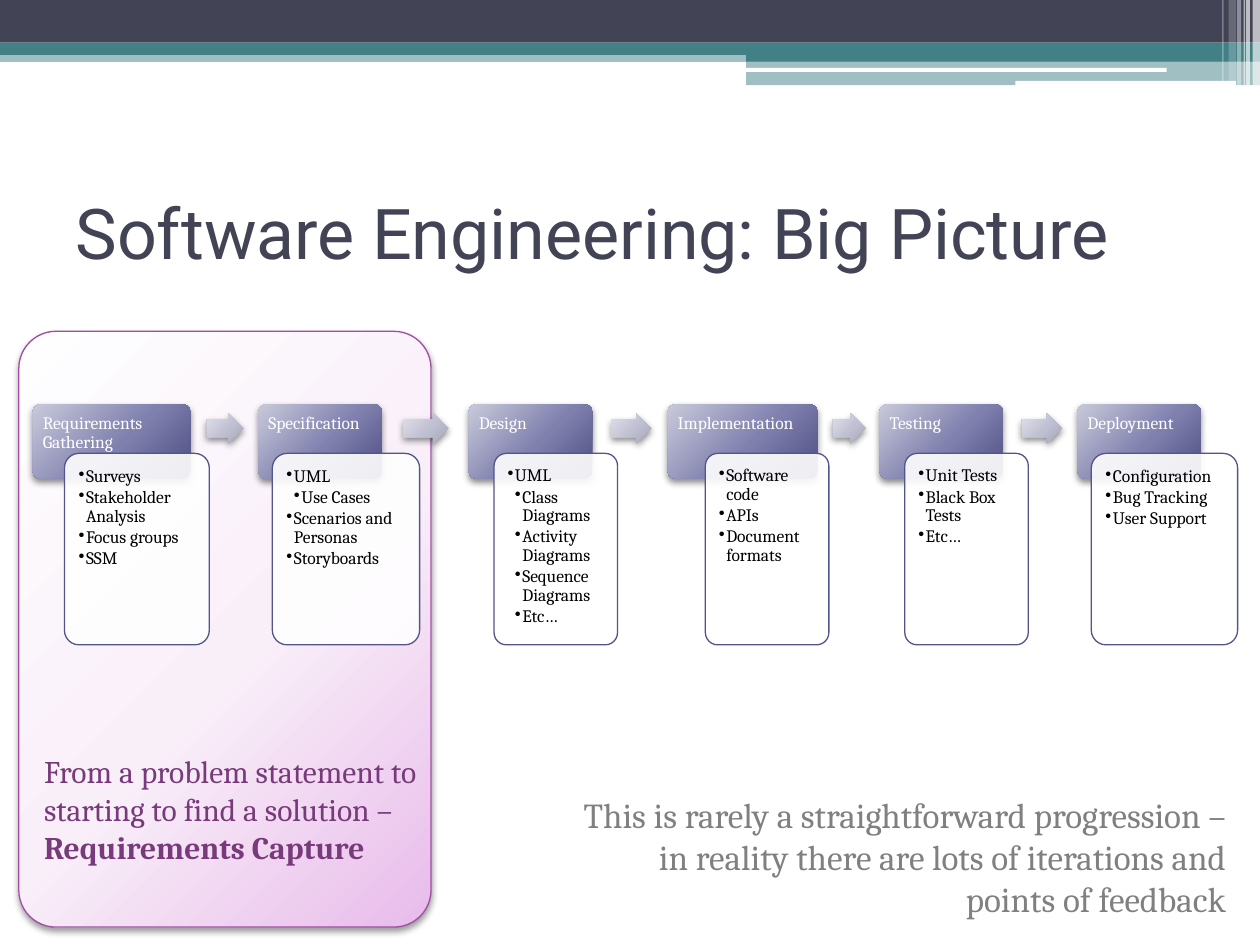
from dataclasses import dataclass
from typing import Optional

from pptx import Presentation, oxml
from pptx import util as u
from pptx.dml.color import RGBColor
from pptx.enum import shapes, text
from pptx.oxml import ns

RECT = shapes.MSO_SHAPE.RECTANGLE
ROUND = shapes.MSO_SHAPE.ROUNDED_RECTANGLE
ARROW = shapes.MSO_SHAPE.RIGHT_ARROW
SERIF = "Cambria"
NAVY, TEAL, WHITE, INDIGO = "424456", "438086", "FFFFFF", "53548A"
HEADER_SHADES = ("C9C9DA", "7F80AE", "4D4E81")
ARROW_SHADES = ("E1E1EA", "C0C0D3", "A7A7B7")
CAPTURE_SHADES = ("FEFEFF", "F9EFF9", "E8BBEA")


@dataclass
class Box:
    left: float
    top: float
    width: float
    height: float

    def lengths(self) -> list:
        return [u.Cm(v) for v in (self.left, self.top, self.width, self.height)]


@dataclass
class Band:
    box: Box
    color: str
    opacity: int = 100
    preset: int = RECT


@dataclass
class Bullet:
    wording: str
    level: int = 1


@dataclass
class Span:
    left: float
    width: float


@dataclass
class Stage:
    label: str
    header: Span
    card: Span
    bullets: list
    arrow: Optional[Span] = None


@dataclass
class Caption:
    box: Box
    runs: list
    size: int
    color: str
    align: int


def rgb(color: str) -> RGBColor:
    return RGBColor.from_string(color)


def add_preset(slide, preset, box: Box, adjustments=()):
    shape = slide.shapes.add_shape(preset, *box.lengths())
    for index, value in enumerate(adjustments):
        shape.adjustments[index] = value
    shape.shadow.inherit = False
    shape.line.fill.background()
    return shape


def fill_solid(shape, color: str, opacity: int = 100) -> None:
    shape.fill.solid()
    shape.fill.fore_color.rgb = rgb(color)
    if opacity < 100:
        solid = shape._element.spPr.find(ns.qn("a:solidFill"))
        solid[0].append(oxml.parse_xml(
            f'<a:alpha {ns.nsdecls("a")} val="{opacity * 1000}"/>'))


def fill_radial(shape, shades: tuple) -> None:
    stops = "".join(
        f'<a:gs pos="{position * 1000}"><a:srgbClr val="{shade}"/></a:gs>'
        for position, shade in zip((0, 55, 100), shades))
    shape.fill.gradient()
    properties = shape._element.spPr
    properties.replace(properties.find(ns.qn("a:gradFill")), oxml.parse_xml(
        f'<a:gradFill {ns.nsdecls("a")} rotWithShape="1"><a:gsLst>{stops}</a:gsLst>'
        '<a:path path="circle"><a:fillToRect l="-40000" t="-90000" '
        'r="140000" b="190000"/></a:path></a:gradFill>'))


def drop_shadow(shape, opacity: int = 45) -> None:
    effects = shape._element.spPr.find(ns.qn("a:effectLst"))
    effects.append(oxml.parse_xml(
        f'<a:outerShdw {ns.nsdecls("a")} blurRad="{u.Pt(4)}" dist="{u.Pt(2)}" '
        'dir="5400000" algn="ctr" rotWithShape="0"><a:srgbClr val="000000">'
        f'<a:alpha val="{opacity * 1000}"/></a:srgbClr></a:outerShdw>'))


def outline(shape, color: str) -> None:
    shape.line.color.rgb = rgb(color)
    shape.line.width = u.Pt(0.75)


def add_run(paragraph, wording: str, size: int, color: str,
            face: str = SERIF, bold: bool = False) -> None:
    run = paragraph.add_run()
    run.text = wording
    run.font.size = u.Pt(size)
    run.font.name = face
    run.font.bold = bold
    run.font.color.rgb = rgb(color)


def prepare_frame(shape, inset: float):
    frame = shape.text_frame
    frame.word_wrap = True
    frame.vertical_anchor = text.MSO_ANCHOR.TOP
    frame.margin_left = frame.margin_right = u.Cm(inset)
    frame.margin_top = frame.margin_bottom = u.Cm(inset)
    return frame


def add_bullets(frame, bullets: list) -> None:
    for index, bullet in enumerate(bullets):
        paragraph = frame.add_paragraph() if index else frame.paragraphs[0]
        paragraph.alignment = text.PP_ALIGN.LEFT
        paragraph.level = bullet.level
        paragraph.line_spacing = 0.9
        paragraph.space_after = u.Pt(1.2)
        properties = paragraph._p.get_or_add_pPr()
        properties.set("marL", str(u.Cm(0.15 * bullet.level)))
        properties.set("indent", str(u.Cm(-0.15)))
        properties.append(oxml.parse_xml(f'<a:buChar {ns.nsdecls("a")} char="•"/>'))
        add_run(paragraph, bullet.wording, 10, "000000")


def draw_stage(slide, stage: Stage) -> None:
    header = add_preset(slide, ROUND, Box(stage.header.left, 8.15, stage.header.width, 1.5), [0.1])
    fill_radial(header, HEADER_SHADES)
    drop_shadow(header)
    label = prepare_frame(header, 0.16).paragraphs[0]
    label.alignment = text.PP_ALIGN.LEFT
    label.line_spacing = 0.9
    add_run(label, stage.label, 10, WHITE)

    card = add_preset(slide, ROUND, Box(stage.card.left, 9.14, stage.card.width, 3.86), [0.1])
    fill_solid(card, WHITE, 90)
    outline(card, INDIGO)
    add_bullets(prepare_frame(card, 0.2), stage.bullets)

    if stage.arrow:
        arrow = add_preset(slide, ARROW, Box(stage.arrow.left, 8.33, stage.arrow.width, 0.61), [0.6, 0.5])
        fill_radial(arrow, ARROW_SHADES)
        drop_shadow(arrow)


def draw_caption(slide, caption: Caption) -> None:
    frame = slide.shapes.add_textbox(*caption.box.lengths()).text_frame
    frame.word_wrap = True
    paragraph = frame.paragraphs[0]
    paragraph.alignment = caption.align
    for wording, bold in caption.runs:
        add_run(paragraph, wording, caption.size, caption.color, bold=bold)


BANDS = [
    Band(Box(0, 1.02, 25.4, 0.23), TEAL, 50),
    Band(Box(0, 0, 25.4, 0.86), NAVY),
    Band(Box(0, 0.86, 25.4, 0.25), TEAL),
    Band(Box(15.04, 0.99, 10.36, 0.25), TEAL),
    Band(Box(15.04, 1.22, 10.36, 0.5), TEAL, 50),
    Band(Box(15.01, 1.37, 8.51, 0.08), WHITE, preset=ROUND),
    Band(Box(20.47, 1.63, 4.45, 0.1), WHITE, preset=ROUND),
] + [Band(Box(left, 0, width, height), WHITE, opacity) for left, width, height, opacity in (
    (25.25, 0.15, 1.73, 65), (25.12, 0.08, 1.73, 65), (25.07, 0.03, 1.73, 60),
    (24.94, 0.08, 1.73, 40), (24.77, 0.15, 1.63, 20), (24.64, 0.03, 1.63, 30))]

STAGES = [
    Stage("Requirements Gathering", Span(0.66, 3.18), Span(1.3, 2.92),
          [Bullet("Surveys"), Bullet("Stakeholder Analysis"), Bullet("Focus groups"),
           Bullet("SSM")], Span(4.17, 0.74)),
    Stage("Specification", Span(5.21, 2.49), Span(5.49, 2.97),
          [Bullet("UML"), Bullet("Use Cases", 2), Bullet("Scenarios and Personas"),
           Bullet("Storyboards")], Span(8.13, 0.91)),
    Stage("Design", Span(9.45, 2.49), Span(9.96, 2.49),
          [Bullet("UML"), Bullet("Class Diagrams", 2), Bullet("Activity Diagrams", 2),
           Bullet("Sequence Diagrams", 2), Bullet("Etc…", 2)], Span(12.32, 0.81)),
    Stage("Implementation", Span(13.46, 3.02), Span(14.22, 2.49),
          [Bullet("Software code"), Bullet("APIs"), Bullet("Document formats")], Span(16.79, 0.66)),
    Stage("Testing", Span(17.73, 2.49), Span(18.24, 2.49),
          [Bullet("Unit Tests"), Bullet("Black Box Tests"), Bullet("Etc…")], Span(20.6, 0.81)),
    Stage("Deployment", Span(21.72, 2.49), Span(22, 2.95),
          [Bullet("Configuration"), Bullet("Bug Tracking"), Bullet("User Support")]),
]

CAPTIONS = [
    Caption(Box(11.43, 15.88, 13.54, 2.82),
            [("This is rarely a straightforward progression – in reality there are "
              "lots of iterations and points of feedback", False)],
            20, "808080", text.PP_ALIGN.RIGHT),
    Caption(Box(0.64, 15.04, 8.05, 3.33),
            [("From a problem statement to starting to find a solution – ", False),
             ("Requirements Capture", True)], 18, "783A7A", text.PP_ALIGN.LEFT),
]


def main() -> None:
    deck = Presentation()
    deck.slide_width, deck.slide_height = u.Cm(25.4), u.Cm(19.05)
    slide = deck.slides.add_slide(deck.slide_layouts[5])
    for band in BANDS:
        fill_solid(add_preset(slide, band.preset, band.box), band.color, band.opacity)

    capture = add_preset(slide, ROUND, Box(0.38, 6.68, 8.31, 12.01), [0.09])
    fill_radial(capture, CAPTURE_SHADES)
    outline(capture, "A04DA3")
    drop_shadow(capture, 40)

    title = slide.shapes.title
    title.left, title.top, title.width, title.height = Box(1.27, 3.18, 22.86, 2.97).lengths()
    title.text_frame.vertical_anchor = text.MSO_ANCHOR.MIDDLE
    heading = title.text_frame.paragraphs[0]
    heading.alignment = text.PP_ALIGN.LEFT
    add_run(heading, "Software Engineering: Big Picture", 40, NAVY, "Roboto")

    for stage in STAGES:
        draw_stage(slide, stage)
    for caption in CAPTIONS:
        draw_caption(slide, caption)
    deck.save("out.pptx")


if __name__ == "__main__":
    main()
